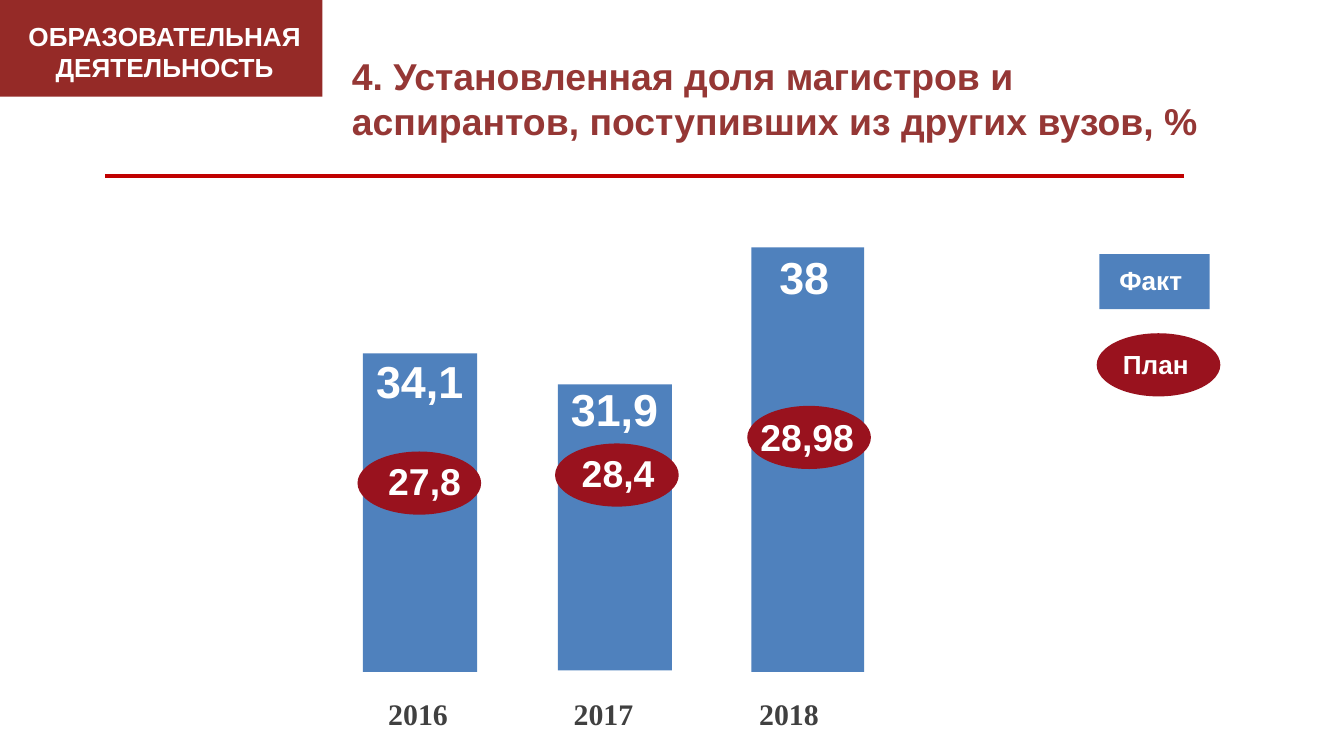
from lxml.etree import SubElement
from pptx import Presentation
from pptx.dml.color import RGBColor
from pptx.enum.shapes import MSO_CONNECTOR, MSO_SHAPE
from pptx.enum.text import PP_ALIGN
from pptx.oxml.ns import qn
from pptx.util import Emu, Pt

SCALE = 9144  # EMU per px, 100 px to the inch
WIDTH = 1000
COLORS = {
    "white": "FFFFFF", "banner": "952A27", "title": "953735",
    "rule": "C00000", "fact": "4F81BD", "plan": "99121E", "year": "404040",
}
BANNER = "ОБРАЗОВАТЕЛЬНАЯ ДЕЯТЕЛЬНОСТЬ"
TITLE = "4. Установленная доля магистров и аспирантов, поступивших из других вузов, %"

# Bar box, then fact and plan: each with its text and the text's box; plan also has its oval's corner
BARS = [
    {"year": "2016", "bar": (270, 263, 85, 237),
     "fact": ("34,1", (270, 258, 90, 50)),
     "oval": (266, 336), "plan": ("27,8", (279, 336, 98, 44))},
    {"year": "2017", "bar": (415, 286, 85, 213),
     "fact": ("31,9", (415, 279, 86, 50)),
     "oval": (413, 330), "plan": ("28,4", (423, 330, 98, 44))},
    {"year": "2018", "bar": (559, 184, 84, 316),
     "fact": ("38", (570, 181, 79, 50)),
     "oval": (556, 302), "plan": ("28,98", (556, 303, 108, 44))},
]
OVAL = (92, 47)
YEARS = (279, 513, 459, 37)
YEAR_STEP = 138

prs = Presentation()
prs.slide_width = Emu(WIDTH * SCALE)
prs.slide_height = Emu(WIDTH * SCALE * 9 // 16)
shapes = prs.slides.add_slide(prs.slide_layouts[6]).shapes


def px(*vals):
    return [Emu(v * SCALE) for v in vals]


def rgb(name):
    return RGBColor.from_string(COLORS[name])


def block(kind, box, color):
    shape = shapes.add_shape(kind, *px(*box))
    shape.shadow.inherit = False
    shape.fill.solid()
    shape.fill.fore_color.rgb = rgb(color)
    shape.line.fill.background()


def label(text, box, size, color="white", face="Arial", align=PP_ALIGN.LEFT, tabs=()):
    frame = shapes.add_textbox(*px(*box)).text_frame
    frame.word_wrap = True
    para = frame.paragraphs[0]
    para.text = text
    para.alignment = align
    if tabs:
        stops = SubElement(para._p.get_or_add_pPr(), qn("a:tabLst"))
        for pos in tabs:
            SubElement(stops, qn("a:tab"), pos=str(pos * SCALE), algn="l")
    font = para.font
    font.name, font.size, font.bold = face, Pt(size), True
    font.color.rgb = rgb(color)


rule = shapes.add_connector(MSO_CONNECTOR.STRAIGHT, *px(881, 131, 78, 131))
rule.line.color.rgb = rgb("rule")
rule.line.width = Pt(2)
SubElement(rule._element.spPr, qn("a:effectLst"))

block(MSO_SHAPE.RECTANGLE, (0, -1, 240, 73), "banner")
label(BANNER, (5, 10, 235, 57), 14, align=PP_ALIGN.CENTER)
label(TITLE, (252, 35, 671, 77), 20, "title")

for item in BARS:
    block(MSO_SHAPE.RECTANGLE, item["bar"], "fact")
    label(*item["fact"], 24)
    block(MSO_SHAPE.OVAL, item["oval"] + OVAL, "plan")
    label(*item["plan"], 20)
label("\t".join(item["year"] for item in BARS), YEARS, 16, "year", "Times New Roman",
      tabs=[YEAR_STEP * i for i in range(1, len(BARS))])

block(MSO_SHAPE.RECTANGLE, (818, 189, 82, 41), "fact")
label("Факт", (823, 192, 73, 34), 14)
block(MSO_SHAPE.OVAL, (816, 248) + OVAL, "plan")
label("План", (811, 254, 98, 34), 14, align=PP_ALIGN.CENTER)

prs.save("out.pptx")
